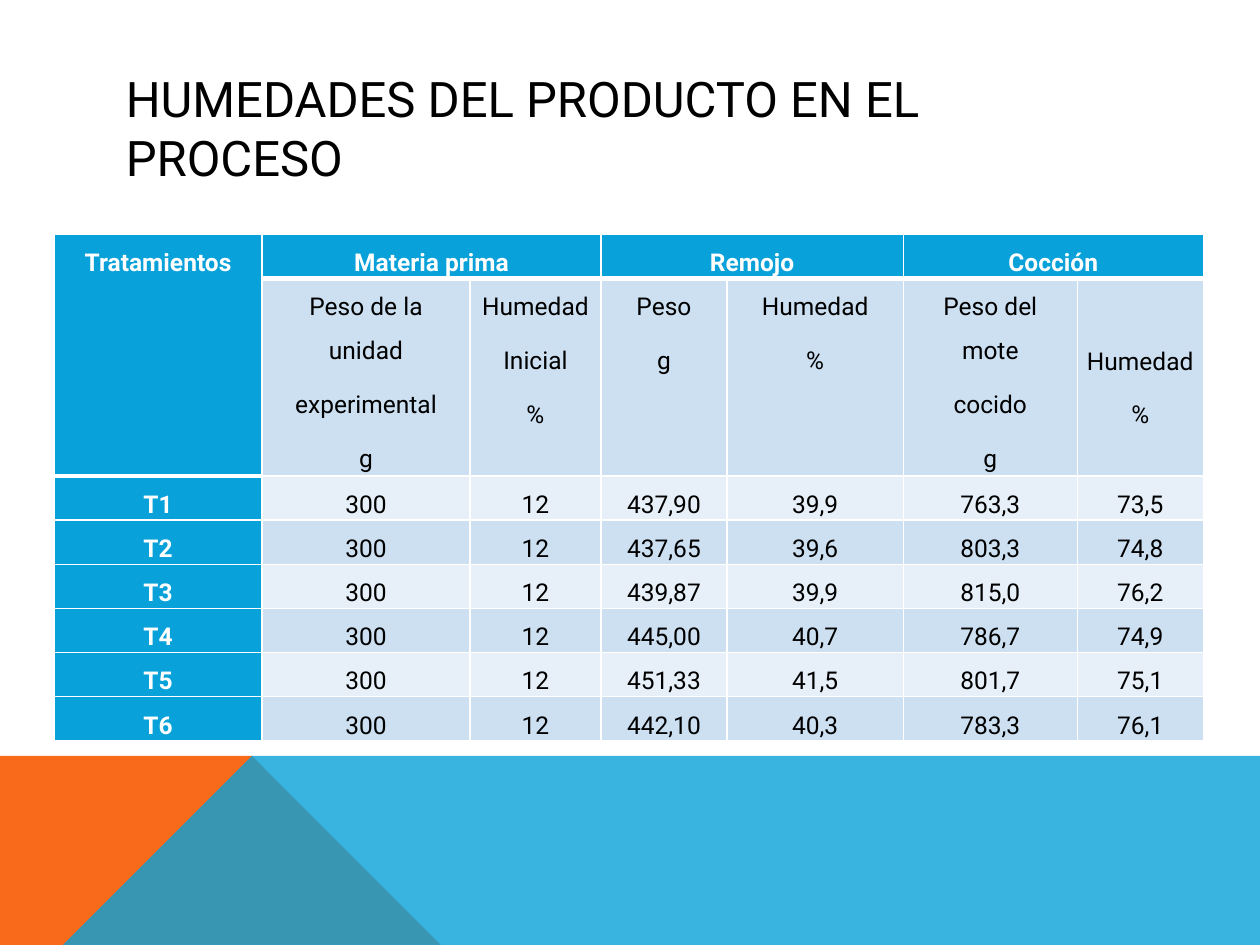
"""Build a slide with a table of product moisture at each process step."""
from dataclasses import dataclass

from lxml.etree import SubElement
from pptx import Presentation
from pptx.dml.color import RGBColor
from pptx.enum.text import MSO_ANCHOR, PP_ALIGN
from pptx.oxml.ns import qn
from pptx.util import Inches, Pt

TITLE = "HUMEDADES DEL PRODUCTO EN EL PROCESO"
STAGES = ["Materia prima", "Remojo", "Cocción"]
HEADS = [
    "Peso de la unidad\nexperimental\ng", "Humedad\nInicial\n%",
    "Peso\ng", "Humedad\n%",
    "Peso del mote\ncocido\ng", "Humedad\n%",
]
DATA = [
    ("T1", "300", "12", "437,90", "39,9", "763,3", "73,5"),
    ("T2", "300", "12", "437,65", "39,6", "803,3", "74,8"),
    ("T3", "300", "12", "439,87", "39,9", "815,0", "76,2"),
    ("T4", "300", "12", "445,00", "40,7", "786,7", "74,9"),
    ("T5", "300", "12", "451,33", "41,5", "801,7", "75,1"),
    ("T6", "300", "12", "442,10", "40,3", "783,3", "76,1"),
]
TOP = ["Tratamientos"] + [text for stage in STAGES for text in (stage, "")]
GRID = [TOP, ["", *HEADS], *DATA]
WIDTHS = [1.65, 1.65, 1.04, 1, 1.4, 1.38, 1]
HEIGHTS = [0.27, 1.38] + [0.27] * len(DATA)
WIDE, HIGH = 10, 7.5
EDGE, PEAK = 5.52, 2.23


@dataclass(frozen=True)
class Theme:
    """Hold the colours, font and type sizes."""
    blue: str = "08A1D9"
    orange: str = "F96A1B"
    dark: str = "CCE0F1"
    light: str = "E7F0F8"
    white: str = "FFFFFF"
    black: str = "000000"
    font: str = "Roboto"
    title: int = 28
    body: int = 14


THEME = Theme()


def paint(fill, color):
    """Set a solid fill."""
    fill.solid()
    fill.fore_color.rgb = RGBColor.from_string(color)


def style(frame, size, color, bold=False):
    """Format all runs of a text frame."""
    for par in frame.paragraphs:
        for run in par.runs:
            font = run.font
            font.name, font.size, font.bold = THEME.font, Pt(size), bold
            font.color.rgb = RGBColor.from_string(color)


def draw(slide, points, color, alpha=100):
    """Draw a closed outline with a plain fill."""
    pen = slide.shapes.build_freeform(*points[0], scale=Inches(1))
    pen.add_line_segments(points[1:], close=True)
    shape = pen.convert_to_shape()
    shape.shadow.inherit = False
    shape.line.fill.background()
    paint(shape.fill, color)
    if alpha < 100:
        tint = shape.fill._xPr.find(".//" + qn("a:srgbClr"))
        SubElement(tint, qn("a:alpha"), val=str(alpha * 1000))


def rule(cell, widths):
    """Give a cell its left, right, top and bottom borders."""
    props = cell._tc.get_or_add_tcPr()
    for place, (side, width) in enumerate(zip("LRTB", widths)):
        line = SubElement(props, qn("a:ln" + side), w=str(Pt(width)))
        fill = SubElement(line, qn("a:solidFill"))
        SubElement(fill, qn("a:srgbClr"), val=THEME.white)
        props.insert(place, line)


def write(cell, text, row, col):
    """Fill and format one table cell."""
    head = row == 0 or col == 0
    band = THEME.dark if row % 2 else THEME.light
    paint(cell.fill, THEME.blue if head else band)
    cell.margin_left = cell.margin_right = Pt(5.4)
    cell.margin_top = cell.margin_bottom = 0
    if row == 1 and col == len(WIDTHS) - 1:
        cell.margin_top = Inches(0.43)
    frame = cell.text_frame
    frame.text = text
    for par in frame.paragraphs:
        par.alignment = PP_ALIGN.CENTER
        par.line_spacing, par.space_before = 1.5, Pt(6)
    style(frame, THEME.body, THEME.white if head else THEME.black, head)
    above = 3 if row == 1 or (row == 2 and col == 0) else 1
    below = 3 if row == 0 or (row == 1 and col == 0) else 1
    rule(cell, (1, 1, above, below))


def add_grid(slide):
    """Add the table with its merged header cells."""
    box = [Inches(n) for n in (0.43, 1.86, sum(WIDTHS), sum(HEIGHTS))]
    table = slide.shapes.add_table(len(GRID), len(WIDTHS), *box).table
    for col, width in zip(table.columns, WIDTHS):
        col.width = Inches(width)
    for row, height in zip(table.rows, HEIGHTS):
        row.height = Inches(height)
    for row, texts in enumerate(GRID):
        for col, text in enumerate(texts):
            write(table.cell(row, col), text, row, col)
    table.cell(0, 0).merge(table.cell(1, 0))
    for col in range(1, len(WIDTHS), 2):
        table.cell(0, col).merge(table.cell(0, col + 1))


def add_title(slide):
    """Add the slide title."""
    box = [Inches(n) for n in (0.9, 0.71, 8.22, 0.6)]
    frame = slide.shapes.add_textbox(*box).text_frame
    frame.word_wrap = True
    frame.vertical_anchor = MSO_ANCHOR.MIDDLE
    frame.text = TITLE
    style(frame, THEME.title, THEME.black)


def main():
    """Build and save the slide."""
    deck = Presentation()
    deck.slide_width, deck.slide_height = Inches(WIDE), Inches(HIGH)
    slide = deck.slides.add_slide(deck.slide_layouts[6])
    draw(slide, [(0, HIGH), (0, EDGE), (PEAK, EDGE), (3.91, HIGH)], THEME.orange)
    draw(slide, [(0, HIGH), (PEAK, EDGE), (WIDE, EDGE), (WIDE, HIGH)], THEME.blue, 80)
    add_title(slide)
    add_grid(slide)
    deck.save("out.pptx")


if __name__ == "__main__":
    main()
